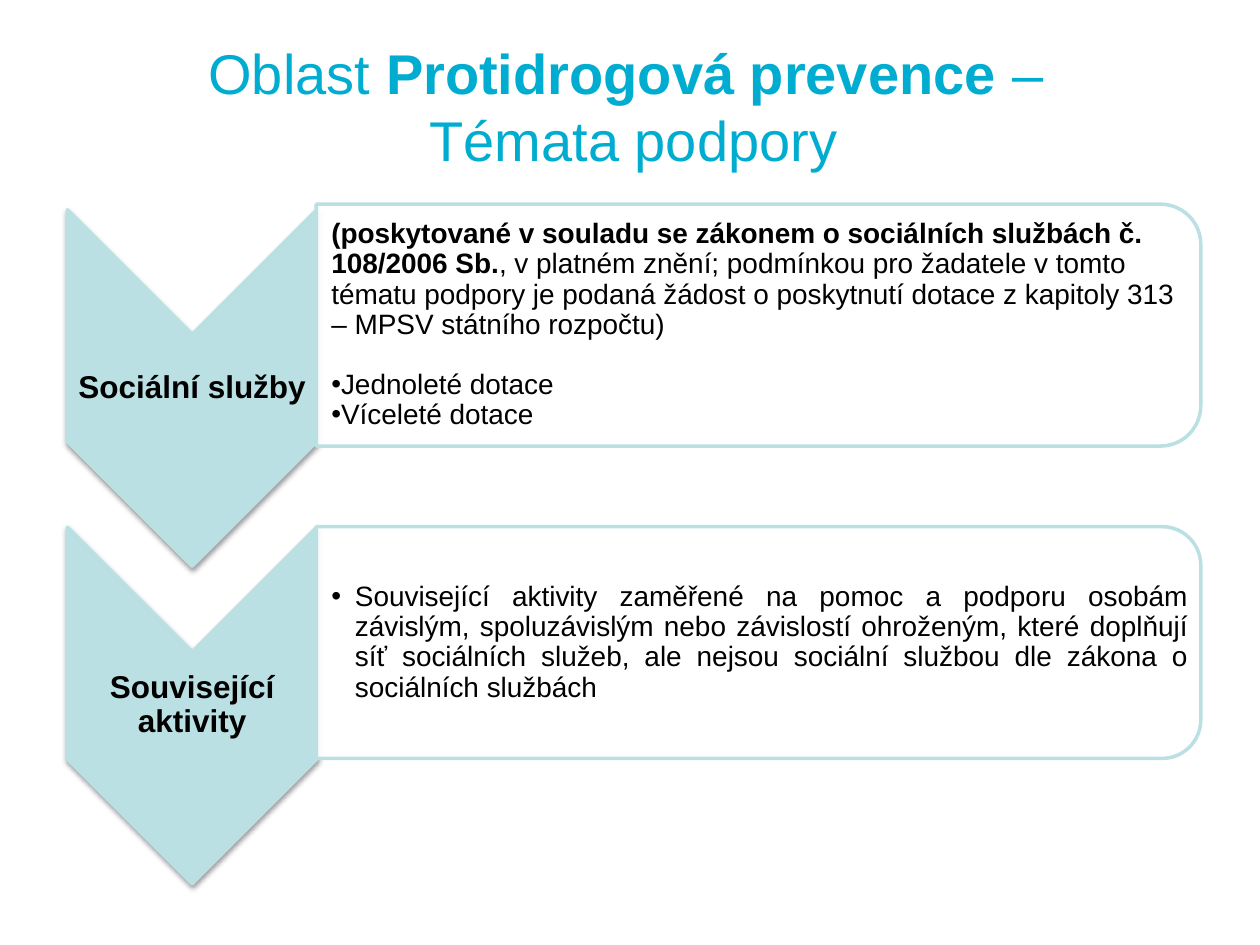
from lxml import etree
from pptx import Presentation
from pptx.dml.color import RGBColor
from pptx.enum.shapes import MSO_SHAPE as Shape
from pptx.enum.text import MSO_ANCHOR as Anchor, PP_ALIGN as Align
from pptx.oxml.ns import qn
from pptx.util import Pt

COLORS = {"title": "00ADD0", "accent": "BBE0E3", "text": "000000", "panel": "FFFFFF"}
FONT = "Arial"
ROW_PITCH = 181.44
CHEVRON_CENTER = (109.8, 221.76)
PANEL_CENTER = (433.44, 185.76)
PANEL_LENGTH = 505.44


def color(name):
    return RGBColor.from_string(COLORS[name])


def add_child(parent, tag, **attributes):
    child = etree.SubElement(parent, qn(tag))
    for name, value in attributes.items():
        child.set(name, str(value))
    return child


def add_rotated_shape(slide, kind, center, width, height, fill):
    left, top = center[0] - width / 2, center[1] - height / 2
    shape = slide.shapes.add_shape(kind, Pt(left), Pt(top), Pt(width), Pt(height))
    shape.rotation = 90
    shape.shadow.inherit = False
    shape.fill.solid()
    shape.fill.fore_color.rgb = color(fill)
    shape.line.color.rgb = color("accent")
    shape.line.width = Pt(2)
    return shape


def add_chevron(slide, center):
    shape = add_rotated_shape(slide, Shape.CHEVRON, center, 203.76, 142.56, "accent")
    effects = shape._element.spPr.find(qn("a:effectLst"))
    shadow = add_child(effects, "a:outerShdw", blurRad=Pt(3.1), dist=Pt(1.6),
                       dir=5400000, rotWithShape=0)
    shade = add_child(shadow, "a:srgbClr", val=COLORS["text"])
    add_child(shade, "a:alpha", val=38000)


def add_panel(slide, center, height):
    shape = add_rotated_shape(slide, Shape.ROUND_2_SAME_RECTANGLE, center,
                              height, PANEL_LENGTH, "panel")
    fill = shape._element.spPr.find(qn("a:solidFill"))
    add_child(fill[0], "a:alpha", val=90000)


def add_text_frame(slide, left, top, width, height, insets=(7.2, 3.6, 7.2, 3.6)):
    box = slide.shapes.add_textbox(Pt(left), Pt(top), Pt(width), Pt(height))
    frame = box.text_frame
    frame.word_wrap = True
    frame.vertical_anchor = Anchor.MIDDLE
    frame.margin_left, frame.margin_top, frame.margin_right, frame.margin_bottom = map(Pt, insets)
    return frame


def add_run(paragraph, text, size, bold=False, fill="text"):
    run = paragraph.add_run()
    run.text = text
    run.font.name = FONT
    run.font.size = Pt(size)
    run.font.bold = bold
    run.font.color.rgb = color(fill)


def add_bullet(paragraph, indent=0):
    properties = paragraph._p.get_or_add_pPr()
    properties.set("marL", str(Pt(indent)))
    properties.set("indent", str(Pt(-indent)))
    add_child(properties, "a:buFont", typeface=FONT)
    add_child(properties, "a:buChar", char="•")


def add_title(slide):
    paragraph = add_text_frame(slide, 20.16, 15.12, 684, 90).paragraphs[0]
    paragraph.alignment = Align.CENTER
    add_run(paragraph, "Oblast ", 32, fill="title")
    add_run(paragraph, "Protidrogová prevence ", 32, True, "title")
    add_run(paragraph, "– ", 32, fill="title")
    paragraph.add_line_break()
    add_run(paragraph, "Témata podpory", 32, fill="title")


def add_label(slide, center, text):
    frame = add_text_frame(slide, center[0] - 71.28, center[1] - 30.6, 142.56, 61.2,
                           (0.7, 0.7, 0.7, 0.7))
    paragraph = frame.paragraphs[0]
    paragraph.alignment = Align.CENTER
    paragraph.line_spacing = 0.9
    add_run(paragraph, text, 18, True)


def add_panel_frame(slide, center, height):
    return add_text_frame(slide, 180.72, center[1] - height / 2, 498.96, height,
                          (8.64, 0.7, 0.7, 0.7))


def add_social_services_text(frame):
    intro = frame.paragraphs[0]
    intro.line_spacing = 0.9
    add_run(intro, "(poskytované v souladu se zákonem o sociálních službách č. 108/2006 Sb.", 16, True)
    add_run(intro, ", v platném znění; podmínkou pro žadatele v tomto tématu podpory "
                   "je podaná žádost o poskytnutí dotace z kapitoly 313 – MPSV státního rozpočtu)", 16)
    for text, space in (("Jednoleté dotace", 17), ("Víceleté dotace", 0)):
        paragraph = frame.add_paragraph()
        add_bullet(paragraph)
        paragraph.line_spacing = 0.9
        paragraph.space_before = Pt(space)
        add_run(paragraph, text, 16)


def add_related_activities_text(frame):
    paragraph = frame.paragraphs[0]
    add_bullet(paragraph, 13.5)
    paragraph.alignment = Align.JUSTIFY
    paragraph.line_spacing = 0.9
    add_run(paragraph, "Související aktivity zaměřené na pomoc a podporu osobám závislým, "
                       "spoluzávislým nebo závislostí ohroženým, které doplňují síť sociálních "
                       "služeb, ale nejsou sociální službou dle zákona o sociálních službách", 16)


def main():
    presentation = Presentation()
    presentation.slide_width, presentation.slide_height = Pt(720), Pt(540)
    slide = presentation.slides.add_slide(presentation.slide_layouts[6])
    add_title(slide)
    rows = (
        ("Sociální služby", 138.24, add_social_services_text),
        ("Související aktivity", 132.48, add_related_activities_text),
    )
    for index, (label, panel_height, add_panel_text) in enumerate(rows):
        offset = index * ROW_PITCH
        chevron_center = (CHEVRON_CENTER[0], CHEVRON_CENTER[1] + offset)
        panel_center = (PANEL_CENTER[0], PANEL_CENTER[1] + offset)
        add_chevron(slide, chevron_center)
        add_label(slide, chevron_center, label)
        add_panel(slide, panel_center, panel_height)
        add_panel_text(add_panel_frame(slide, panel_center, panel_height - 13))
    presentation.save("out.pptx")


if __name__ == "__main__":
    main()
